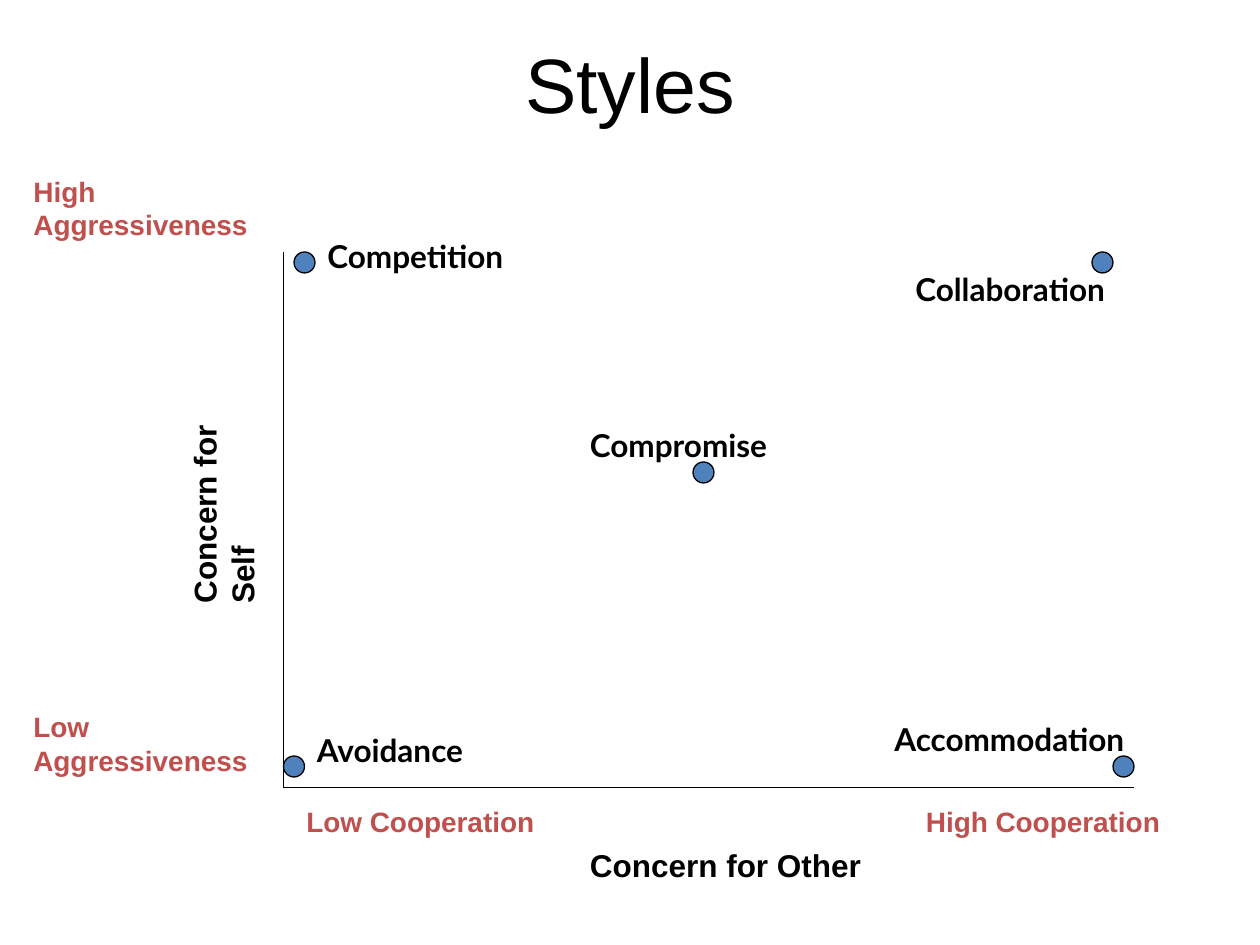
import pptx
import pptx.util
import pptx.dml.color
import pptx.enum.shapes
import pptx.enum.text
import lxml.etree

Pt = pptx.util.Pt

COLORS = {"black": "000000", "red": "C0504D", "blue": "4F81BD"}

TITLE = "Styles"
ORIGIN = (162, 450)
AXIS_ENDS = [(162, 144), (648, 450)]
DOT_SIZE = 12

# Text, left, top, width, height of the box
SCALE_LABELS = [
    ("High Aggressiveness", 12, 96, 156, 46),
    ("Low Aggressiveness", 12, 402, 144, 46),
    ("Low Cooperation", 168, 456, 216, 27),
    ("High Cooperation", 522, 456, 156, 27),
]
# Text, left, top, width, height of the unrotated box, rotation
AXIS_TITLES = [
    ("Concern for Self", 43.2, 257, 154, 36, 270),
    ("Concern for Other", 330, 480, 198, 36, 0),
]
# Name, dot left and top, label left, top and width
STYLES = [
    ("Competition", (168, 144), (180, 132, 162)),
    ("Avoidance", (162, 432), (174, 414, 120)),
    ("Compromise", (396, 264), (330, 240, 138)),
    ("Collaboration", (624, 144), (516, 150.5, 142)),
    ("Accommodation", (636, 432), (504, 408, 186)),
]
STYLE_LABEL_HEIGHT = 29


def rgb(name):
    return pptx.dml.color.RGBColor.from_string(COLORS[name])


def write_text(shape, text, size=18, font="Arial", color="black", bold=True,
               align=pptx.enum.text.PP_ALIGN.LEFT,
               anchor=pptx.enum.text.MSO_ANCHOR.TOP):
    frame = shape.text_frame
    frame.word_wrap = True
    frame.vertical_anchor = anchor
    paragraph = frame.paragraphs[0]
    paragraph.alignment = align
    run = paragraph.add_run()
    run.text = text
    run.font.size = Pt(size)
    run.font.name = font
    run.font.bold = bold
    run.font.color.rgb = rgb(color)


def add_label(slide, text, left, top, width, height, rotation=0, **text_format):
    box = slide.shapes.add_textbox(Pt(left), Pt(top), Pt(width), Pt(height))
    box.rotation = rotation
    write_text(box, text, **text_format)


def add_axis(slide, start, end):
    axis = slide.shapes.add_connector(
        pptx.enum.shapes.MSO_CONNECTOR.STRAIGHT, *map(Pt, start + end))
    axis.line.color.rgb = rgb("black")
    axis.line.width = Pt(0.75)
    properties = axis.element.spPr
    lxml.etree.SubElement(properties, pptx.oxml.ns.qn("a:effectLst"))


def add_dot(slide, left, top):
    dot = slide.shapes.add_shape(
        pptx.enum.shapes.MSO_SHAPE.OVAL,
        Pt(left), Pt(top), Pt(DOT_SIZE), Pt(DOT_SIZE))
    dot.shadow.inherit = False
    dot.fill.solid()
    dot.fill.fore_color.rgb = rgb("blue")
    dot.line.color.rgb = rgb("black")
    dot.line.width = Pt(0.75)


def main():
    presentation = pptx.Presentation()
    presentation.slide_width = Pt(720)
    presentation.slide_height = Pt(540)
    slide = presentation.slides.add_slide(presentation.slide_layouts[5])

    title = slide.shapes.title
    title.left, title.top, title.width, title.height = map(Pt, (36, 12, 648, 70))
    write_text(title, TITLE, size=44, bold=False,
               align=pptx.enum.text.PP_ALIGN.CENTER,
               anchor=pptx.enum.text.MSO_ANCHOR.MIDDLE)

    for end in AXIS_ENDS:
        add_axis(slide, ORIGIN, end)
    for label in SCALE_LABELS:
        add_label(slide, *label, size=16, color="red")
    for axis_title in AXIS_TITLES:
        add_label(slide, *axis_title)
    for name, dot_position, label_place in STYLES:
        add_dot(slide, *dot_position)
        add_label(slide, name, *label_place, STYLE_LABEL_HEIGHT, font="Lato")

    presentation.save("out.pptx")


if __name__ == "__main__":
    main()
